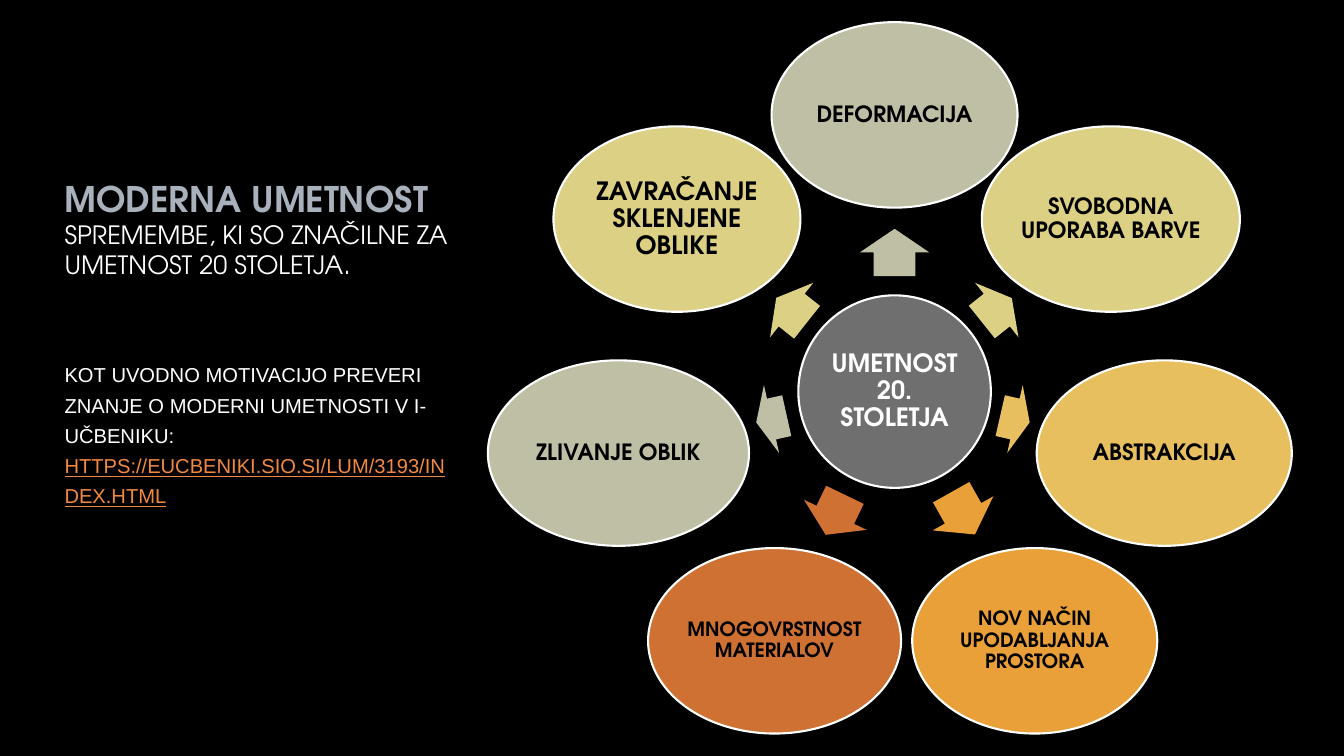
"""Build a slide with a radial diagram of the traits of 20th century art."""
from dataclasses import dataclass
from math import atan2, cos, degrees, pi, sin

from pptx import Presentation
from pptx.dml.color import RGBColor
from pptx.enum import shapes, text
from pptx.oxml import xmlchemy as xml
from pptx.util import Pt


@dataclass(frozen=True)
class Theme:
    display: str = "TeX Gyre Adventor"
    plain: str = "Arial"
    black: str = "000000"
    white: str = "FFFFFF"
    heading: str = "A8B1BC"
    link: str = "F28943"
    hub: str = "6F6F6F"
    sage: str = "BFBFA5"
    straw: str = "DCD084"
    gold: str = "E7BF5F"
    orange: str = "E9A039"
    rust: str = "CF7133"
    heading_size: float = 25.2
    large: float = 18
    medium: float = 16
    small: float = 14


THEME = Theme()
HUB_X, HUB_Y, HUB_SIZE = 639, 279.7, 137.5
ORBIT, PETAL_HEIGHT, ARROW_WIDTH = 197.6, 132.5, 49.7

# label, fill, type size, petal width, sideways shift, arrow length, arrow distance
PETALS = [
    ("DEFORMACIJA", THEME.sage, THEME.medium, 175.7, 0, 33.8, 99.4),
    ("SVOBODNA UPORABA BARVE", THEME.straw, THEME.medium, 184.3, 0, 27.4, 93.4),
    ("ABSTRAKCIJA", THEME.gold, THEME.medium, 182.2, 0, 21.6, 88.2),
    ("NOV NAČIN UPODABLJANJA PROSTORA", THEME.orange, THEME.small, 175, 14.4, 34.6, 99.8),
    ("MNOGOVRSTNOST MATERIALOV", THEME.rust, THEME.small, 180.7, 0, 31.7, 97.7),
    ("ZLIVANJE OBLIK", THEME.sage, THEME.medium, 186.5, -4.6, 22.3, 90.1),
    ("ZAVRAČANJE SKLENJENE OBLIKE", THEME.straw, THEME.large, 176.4, -1, 28.1, 93.8),
]


def add_span(para, words, *, size=THEME.large, font=THEME.display, color=THEME.white,
             bold=False, underline=False, small_caps=False):
    span = para.add_run()
    span.text = words
    span.font.name, span.font.size = font, Pt(size)
    span.font.color.rgb = RGBColor.from_string(color)
    span.font.bold, span.font.underline = bold, underline
    if small_caps:
        span._r.get_or_add_rPr().set("cap", "small")


def add_filled(page, kind, x, y, width, height, fill):
    box = page.shapes.add_shape(kind, Pt(x - width / 2), Pt(y - height / 2),
                                Pt(width), Pt(height))
    box.shadow.inherit = False
    box.fill.solid()
    box.fill.fore_color.rgb = RGBColor.from_string(fill)
    box.line.fill.background()
    return box


def add_bubble(page, x, y, width, height, fill, words, size, color):
    box = add_filled(page, shapes.MSO_SHAPE.OVAL, x, y, width, height, fill)
    box.line.color.rgb = RGBColor.from_string(THEME.white)
    box.line.width = Pt(1.5)
    frame = box.text_frame
    frame.word_wrap = True
    frame.vertical_anchor = text.MSO_ANCHOR.MIDDLE
    frame.margin_left = frame.margin_right = Pt(0)
    frame.margin_top = frame.margin_bottom = Pt(1.8)
    para = frame.paragraphs[0]
    para.alignment = text.PP_ALIGN.CENTER
    para.line_spacing = 0.9
    add_span(para, words, size=size, color=color, bold=True)


def add_arrow(page, x, y, length, angle, fill):
    arrow = add_filled(page, shapes.MSO_SHAPE.RIGHT_ARROW, x, y, length, ARROW_WIDTH, fill)
    arrow.adjustments[0], arrow.adjustments[1] = 0.6, 0.5
    arrow.rotation = degrees(angle) % 360


def add_wheel(page):
    add_bubble(page, HUB_X, HUB_Y, HUB_SIZE, HUB_SIZE, THEME.hub,
               "UMETNOST 20. STOLETJA", THEME.large, THEME.white)
    for index, (words, fill, size, width, shift, length, distance) in enumerate(PETALS):
        turn = 2 * pi * index / len(PETALS) - pi / 2
        dx, dy = ORBIT * cos(turn) + shift, ORBIT * sin(turn)
        angle = atan2(dy, dx)
        add_arrow(page, HUB_X + distance * cos(angle), HUB_Y + distance * sin(angle),
                  length, angle, fill)
        add_bubble(page, HUB_X + dx, HUB_Y + dy, width, PETAL_HEIGHT, fill,
                   words, size, THEME.black)


def place_frame(holder, top, height, anchor):
    holder.left, holder.top = Pt(38.9), Pt(top)
    holder.width, holder.height = Pt(292.3), Pt(height)
    frame = holder.text_frame
    frame.word_wrap = True
    frame.auto_size = text.MSO_AUTO_SIZE.NONE
    frame.vertical_anchor = anchor
    return frame


def fill_title(holder):
    frame = place_frame(holder, 126, 108, text.MSO_ANCHOR.BOTTOM)
    frame.margin_bottom = Pt(34)
    heading, subtitle = frame.paragraphs[0], frame.add_paragraph()
    heading.alignment = subtitle.alignment = text.PP_ALIGN.LEFT
    add_span(heading, "MODERNA UMETNOST", size=THEME.heading_size,
             color=THEME.heading, bold=True)
    add_span(subtitle, "SPREMEMBE, KI SO ZNAČILNE ZA UMETNOST 20 STOLETJA.")


def fill_body(holder):
    frame = place_frame(holder, 237.5, 144, text.MSO_ANCHOR.MIDDLE)
    para = frame.paragraphs[0]
    para.line_spacing = Pt(21.6)
    para.space_before = Pt(0)
    props = para._p.get_or_add_pPr()
    props.set("marL", "0")
    props.set("indent", "0")
    props.append(xml.OxmlElement("a:buNone"))
    add_span(para, "kot uvodno motivacijo preveri znanje o moderni umetnosti v i- učbeniku: ",
             font=THEME.plain, small_caps=True)
    add_span(para, "https://eucbeniki.sio.si/lum/3193/index.html", font=THEME.plain,
             color=THEME.link, underline=True, small_caps=True)


def main():
    deck = Presentation()
    deck.slide_width, deck.slide_height = Pt(960), Pt(540)
    page = deck.slides.add_slide(deck.slide_layouts[1])
    page.background.fill.solid()
    page.background.fill.fore_color.rgb = RGBColor.from_string(THEME.black)
    add_wheel(page)
    fill_title(page.shapes.title)
    fill_body(page.placeholders[1])
    deck.save("out.pptx")


if __name__ == "__main__":
    main()
